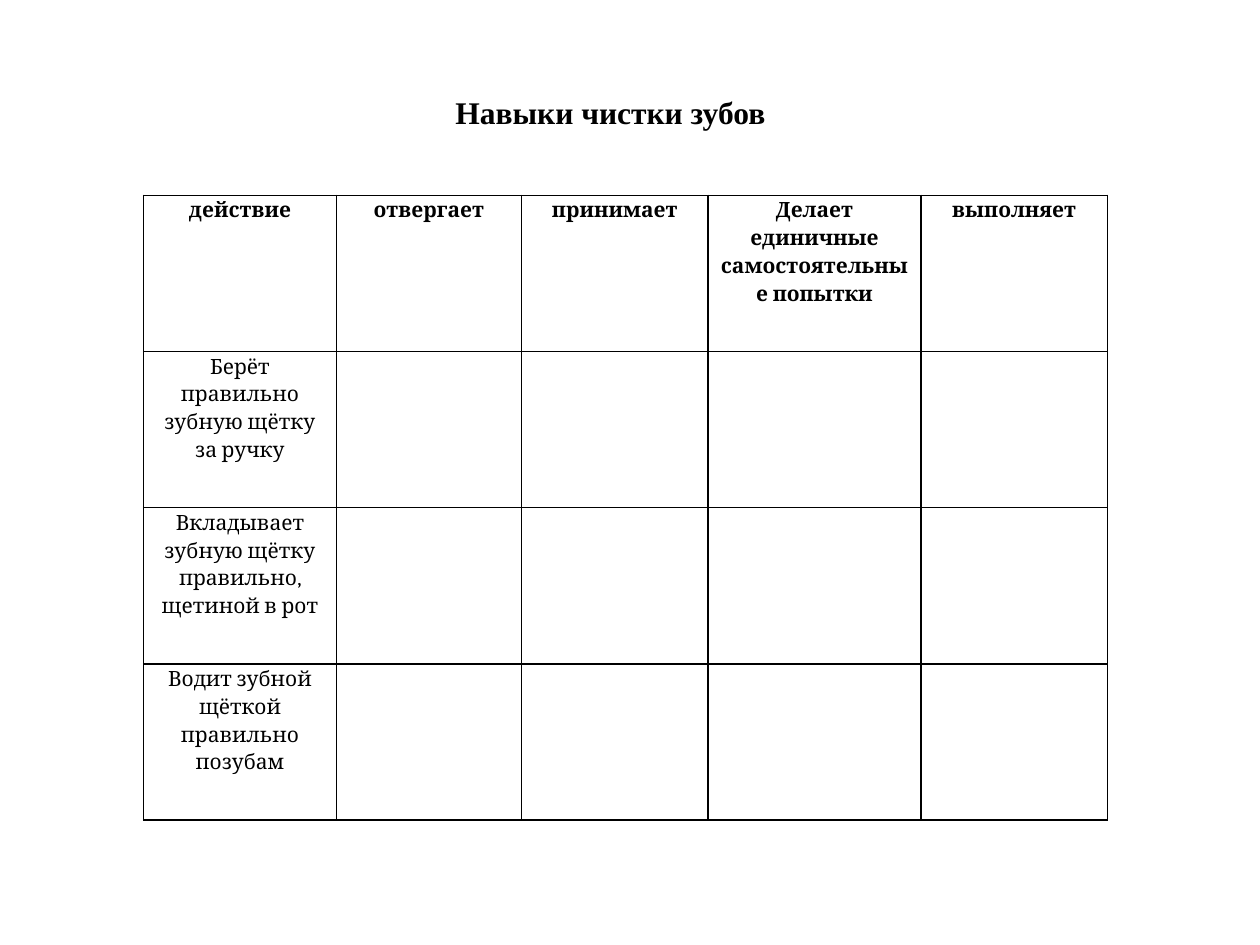
"""Build a tooth-brushing skills checklist slide."""
from dataclasses import dataclass

from lxml import etree
from pptx import Presentation
from pptx import util as u
from pptx.dml.color import RGBColor
from pptx.enum import text
from pptx.oxml.ns import qn

EMU_PER_PX = 9144


@dataclass(frozen=True)
class Theme:
    ink: str = "000000"
    paper: str = "FFFFFF"
    title_font: str = "Times New Roman"
    table_font: str = "Cambria"
    title_size: int = 18
    table_size: int = 12
    border_width: int = 1
    line_spacing: float = 1.15


@dataclass(frozen=True)
class Box:
    left: int
    top: int
    width: int
    height: int

    def emu(self) -> tuple[int, ...]:
        return tuple(px(side) for side in (self.left, self.top, self.width, self.height))


@dataclass(frozen=True)
class Column:
    heading: str
    width: int


THEME = Theme()
TITLE = "Навыки чистки зубов"
TITLE_BOX = Box(350, 69, 269, 71)
TABLE_LEFT, TABLE_TOP, ROW_HEIGHT, CELL_INSET = 114, 155, 124, 8
COLUMNS = (
    Column("действие", 153),
    Column("отвергает", 147),
    Column("принимает", 148),
    Column("Делает единичные самостоятельные попытки", 169),
    Column("выполняет", 148),
)
ACTIONS = (
    "Берёт правильно зубную щётку за ручку",
    "Вкладывает зубную щётку правильно, щетиной в рот",
    "Водит зубной щёткой правильно позубам",
)


def px(length: int) -> int:
    return length * EMU_PER_PX


def write(frame, words: str, font: str, size: int, bold: bool) -> None:
    frame.text = words
    para = frame.paragraphs[0]
    para.alignment = text.PP_ALIGN.CENTER
    for span in para.runs:
        span.font.name = font
        span.font.size = u.Pt(size)
        span.font.bold = bold
        span.font.color.rgb = RGBColor.from_string(THEME.ink)


def draw_borders(cell) -> None:
    properties = cell._tc.get_or_add_tcPr()
    for side in ("lnL", "lnR", "lnT", "lnB"):
        line = etree.SubElement(properties, qn(f"a:{side}"), w=str(u.Pt(THEME.border_width)))
        fill = etree.SubElement(line, qn("a:solidFill"))
        etree.SubElement(fill, qn("a:srgbClr"), val=THEME.ink)


def style_cell(cell) -> None:
    draw_borders(cell)
    cell.fill.solid()
    cell.fill.fore_color.rgb = RGBColor.from_string(THEME.paper)
    cell.margin_left = cell.margin_right = px(CELL_INSET)
    cell.margin_top = cell.margin_bottom = 0


def write_cell(cell, words: str, bold: bool) -> None:
    write(cell.text_frame, words, THEME.table_font, THEME.table_size, bold)
    cell.text_frame.paragraphs[0].line_spacing = THEME.line_spacing


def draw_checklist(page) -> None:
    row_count = len(ACTIONS) + 1
    width = sum(column.width for column in COLUMNS)
    box = Box(TABLE_LEFT, TABLE_TOP, width, ROW_HEIGHT * row_count)
    table = page.shapes.add_table(row_count, len(COLUMNS), *box.emu()).table
    for row in table.rows:
        row.height = px(ROW_HEIGHT)
    for cell in table.iter_cells():
        style_cell(cell)
    for index, column in enumerate(COLUMNS):
        table.columns[index].width = px(column.width)
        write_cell(table.cell(0, index), column.heading, True)
    for index, action in enumerate(ACTIONS, start=1):
        write_cell(table.cell(index, 0), action, False)


def draw_title(page) -> None:
    frame = page.shapes.add_textbox(*TITLE_BOX.emu()).text_frame
    frame.word_wrap = False
    frame.vertical_anchor = text.MSO_ANCHOR.TOP
    write(frame, TITLE, THEME.title_font, THEME.title_size, True)


def main() -> None:
    deck = Presentation()
    deck.slide_width, deck.slide_height = px(1000), px(750)
    page = deck.slides.add_slide(deck.slide_layouts[6])
    draw_checklist(page)
    draw_title(page)
    deck.save("out.pptx")


if __name__ == "__main__":
    main()
